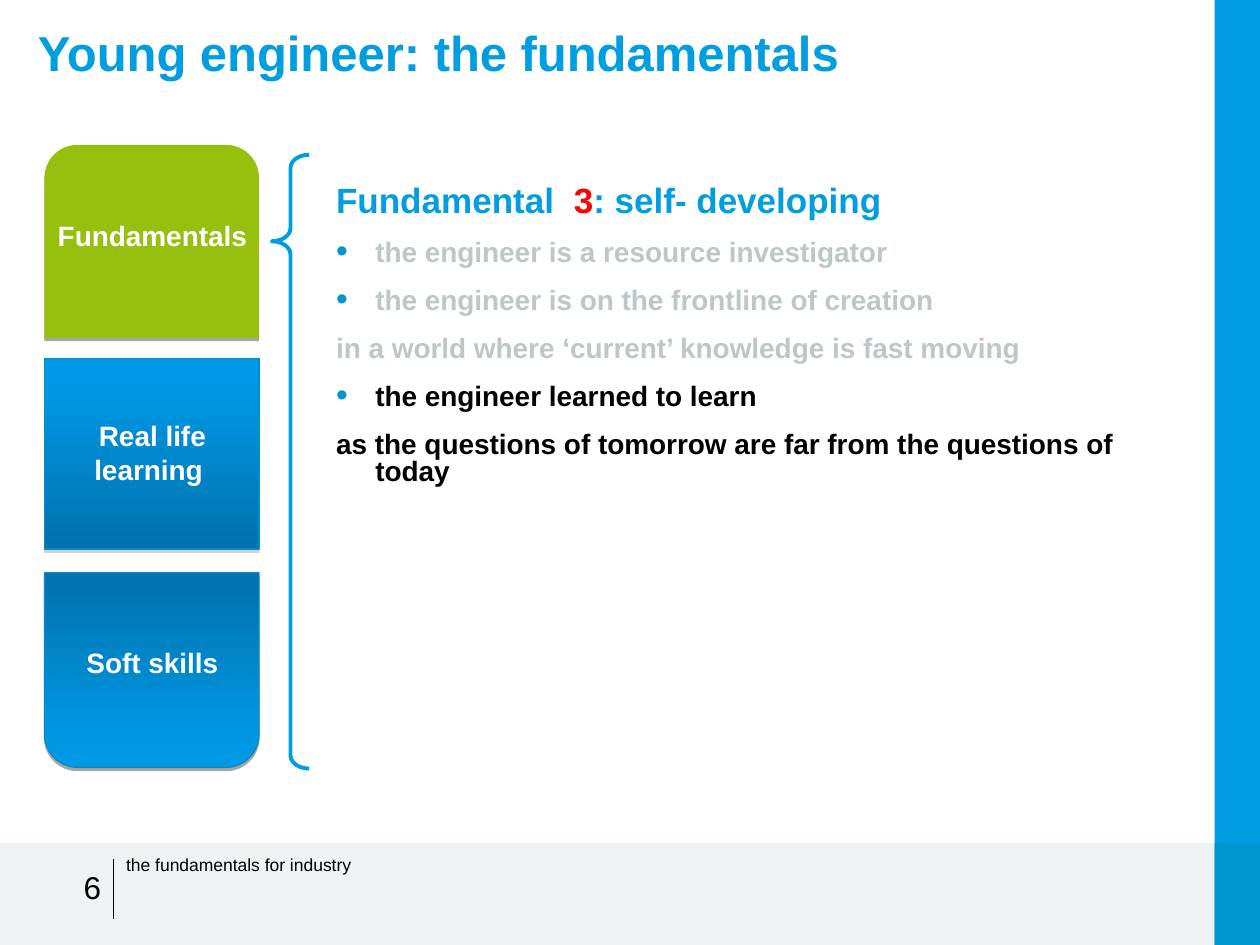
import dataclasses

import lxml.etree
import pptx
import pptx.dml.color
import pptx.enum.shapes
import pptx.enum.text
import pptx.oxml.ns
import pptx.util

Pt = pptx.util.Pt
SHAPE = pptx.enum.shapes.MSO_SHAPE
ALIGN = pptx.enum.text.PP_ALIGN
ANCHOR = pptx.enum.text.MSO_ANCHOR


@dataclasses.dataclass(frozen=True)
class Theme:
    font: str = "Arial"
    blue: str = "009EE0"
    corner: str = "0096D2"
    edge: str = "008ECB"
    bullet: str = "0093D2"
    green: str = "97BF0D"
    gray: str = "BDC7C8"
    black: str = "000000"
    white: str = "FFFFFF"
    red: str = "FF0000"
    shade: tuple = ((0, "0099E8"), (20, "0096E2"), (100, "0071AC"))
    title: int = 28
    head: int = 20
    page: int = 18
    body: int = 16
    small: int = 10


def rgb(code):
    return pptx.dml.color.RGBColor.from_string(code)


def assign(item, values):
    for name, value in values.items():
        setattr(item, name, value)


def add(parent, tag, **attrs):
    return lxml.etree.SubElement(parent, pptx.oxml.ns.qn(tag), attrs)


def tint(parent, code, alpha=None):
    """Append a colour element, with its opacity in percent."""
    color = add(parent, "a:srgbClr", val=code)
    if alpha is not None:
        add(color, "a:alpha", val=str(alpha * 1000))


class Painter:
    def __init__(self, slide, theme):
        self.slide, self.theme = slide, theme

    def shape(self, kind, box, fill=None, line=None, width=0.75, adj=(),
              alpha=None, turn=0, shadow=None):
        """Draw a preset; a tuple as fill gives gradient stops."""
        item = self.slide.shapes.add_shape(kind, *map(Pt, box))
        item.rotation = turn
        item.shadow.inherit = False
        for i, value in enumerate(adj):
            item.adjustments[i] = value
        if fill is None:
            item.fill.background()
        elif isinstance(fill, tuple):
            self.blend(item, fill)
        else:
            item.fill.solid()
            item.fill.fore_color.rgb = rgb(fill)
            if alpha is not None:
                solid = item._element.spPr.find(pptx.oxml.ns.qn("a:solidFill"))
                solid.clear()
                tint(solid, fill, alpha)
        if line:
            item.line.color.rgb = rgb(line)
            item.line.width = Pt(width)
        else:
            item.line.fill.background()
        if shadow:
            effects = item._element.spPr.find(pptx.oxml.ns.qn("a:effectLst"))
            cast = add(effects, "a:outerShdw", blurRad="0", dist=str(Pt(1.8)),
                       dir="5400000", rotWithShape="0")
            tint(cast, shadow, 35)

    def blend(self, item, stops):
        item.fill.gradient()
        grad = item._element.spPr.find(pptx.oxml.ns.qn("a:gradFill"))
        grad.clear()
        grad.set("rotWithShape", "1")
        group = add(grad, "a:gsLst")
        for place, code in stops:
            tint(add(group, "a:gs", pos=str(place * 1000)), code)
        add(grad, "a:lin", ang="5400000", scaled="0")

    def rule(self, x, top, end):
        item = self.slide.shapes.add_connector(
            pptx.enum.shapes.MSO_CONNECTOR.STRAIGHT, *map(Pt, (x, top, x, end)))
        item.line.color.rgb = rgb(self.theme.black)
        item.line.width = Pt(0.75)
        add(item._element.spPr, "a:effectLst")

    def frame(self, box, inset=(7.2, 3.6, 7.2, 3.6), anchor=ANCHOR.TOP):
        frame = self.slide.shapes.add_textbox(*map(Pt, box)).text_frame
        sides = ("margin_left", "margin_top", "margin_right", "margin_bottom")
        assign(frame, dict(zip(sides, map(Pt, inset)),
                           word_wrap=True, vertical_anchor=anchor))
        return frame

    def text(self, para, runs, size, bold=True, **form):
        """Fill a paragraph with (words, colour) runs."""
        assign(para, form)
        for words, code in runs:
            run = para.add_run()
            run.text = words
            assign(run.font, dict(name=self.theme.font, size=Pt(size), bold=bold))
            run.font.color.rgb = rgb(code)

    def label(self, words, box, size, code, bold=True, inset=(7.2, 3.6, 7.2, 3.6),
              anchor=ANCHOR.MIDDLE, **form):
        frame = self.frame(box, inset, anchor)
        self.text(frame.paragraphs[0], [(words, code)], size, bold, **form)

    def points(self, box, head, rows):
        """Set a heading and rows of (words, colour, bulleted)."""
        theme = self.theme
        frame = self.frame(box, (7.2, 5.8, 7.2, 3.6))
        self.text(frame.paragraphs[0], head, theme.head, line_spacing=0.8)
        for words, code, mark in rows:
            para = frame.add_paragraph()
            assign(para, dict(level=1, line_spacing=0.8, space_before=Pt(12)))
            props = para._p.get_or_add_pPr()
            props.set("marL", str(Pt(22.4)))
            props.set("indent", str(-Pt(22.4)))
            if mark:
                tint(add(props, "a:buClr"), theme.bullet)
                add(props, "a:buSzPct", val="120000")
                add(props, "a:buFont", typeface=theme.font)
                add(props, "a:buChar", char="•")
            else:
                add(props, "a:buNone")
            self.text(para, [(words, code)], theme.body)


def main():
    deck = pptx.Presentation()
    deck.slide_width, deck.slide_height = Pt(720), Pt(540)
    theme = Theme()
    draw = Painter(deck.slides.add_slide(deck.slide_layouts[6]), theme)

    foot, side = 481.7, 694.1
    draw.shape(SHAPE.RECTANGLE, (0, foot, 720, 540 - foot), theme.gray, alpha=23)
    draw.shape(SHAPE.RECTANGLE, (side, 0, 720 - side, 540), theme.blue)
    draw.shape(SHAPE.RECTANGLE, (side, foot, 720 - side, 540 - foot), theme.corner)
    draw.rule(65, 491, 525)
    draw.label("the fundamentals for industry", (65, 484.6, 228, 19.4),
               theme.small, theme.black, bold=False)
    draw.label("6", (18, 488.9, 46.8, 35.3), theme.page, theme.black,
               bold=False, alignment=ALIGN.RIGHT)
    draw.label("Young engineer: the fundamentals", (14.6, 11.5, 648, 46),
               theme.title, theme.blue, anchor=ANCHOR.TOP, line_spacing=0.95)

    cap = dict(kind=SHAPE.ROUND_2_SAME_RECTANGLE, adj=(0.17, 0), shadow=theme.black)
    glow = dict(fill=theme.shade, line=theme.edge)
    tiles = [
        ("Fundamentals", 82.8, 110.3, 134.3, dict(cap, fill=theme.green)),
        ("Real life learning ", 204.9, 108.9, 258.5,
         dict(glow, kind=SHAPE.RECTANGLE, shadow="808080")),
        ("Soft skills", 327.3, 111.2, 378.7, dict(cap, **glow, turn=180)),
    ]
    for words, top, high, mid, look in tiles:
        draw.shape(box=(25.4, top, 122.6, high), **look)
        draw.label(words, (32.4, mid - 9.7, 109.4, 19.4), theme.body, theme.white,
                   inset=(0, 0, 0, 0), alignment=ALIGN.CENTER)

    draw.shape(SHAPE.LEFT_BRACE, (155.3, 88.4, 21.4, 350.8), line=theme.blue,
               width=2.25, adj=(0.349, 0.141))
    draw.points(
        (185, 100.8, 484, 217.4),
        [("Fundamental  ", theme.blue), ("3", theme.red),
         (": self- developing", theme.blue)],
        [("the engineer is a resource investigator", theme.gray, True),
         ("the engineer is on the frontline of creation", theme.gray, True),
         ("in a world where ‘current’ knowledge is fast moving", theme.gray, False),
         ("the engineer learned to learn", theme.black, True),
         ("as the questions of tomorrow are far from the questions of today",
          theme.black, False)])
    deck.save("out.pptx")


if __name__ == "__main__":
    main()
